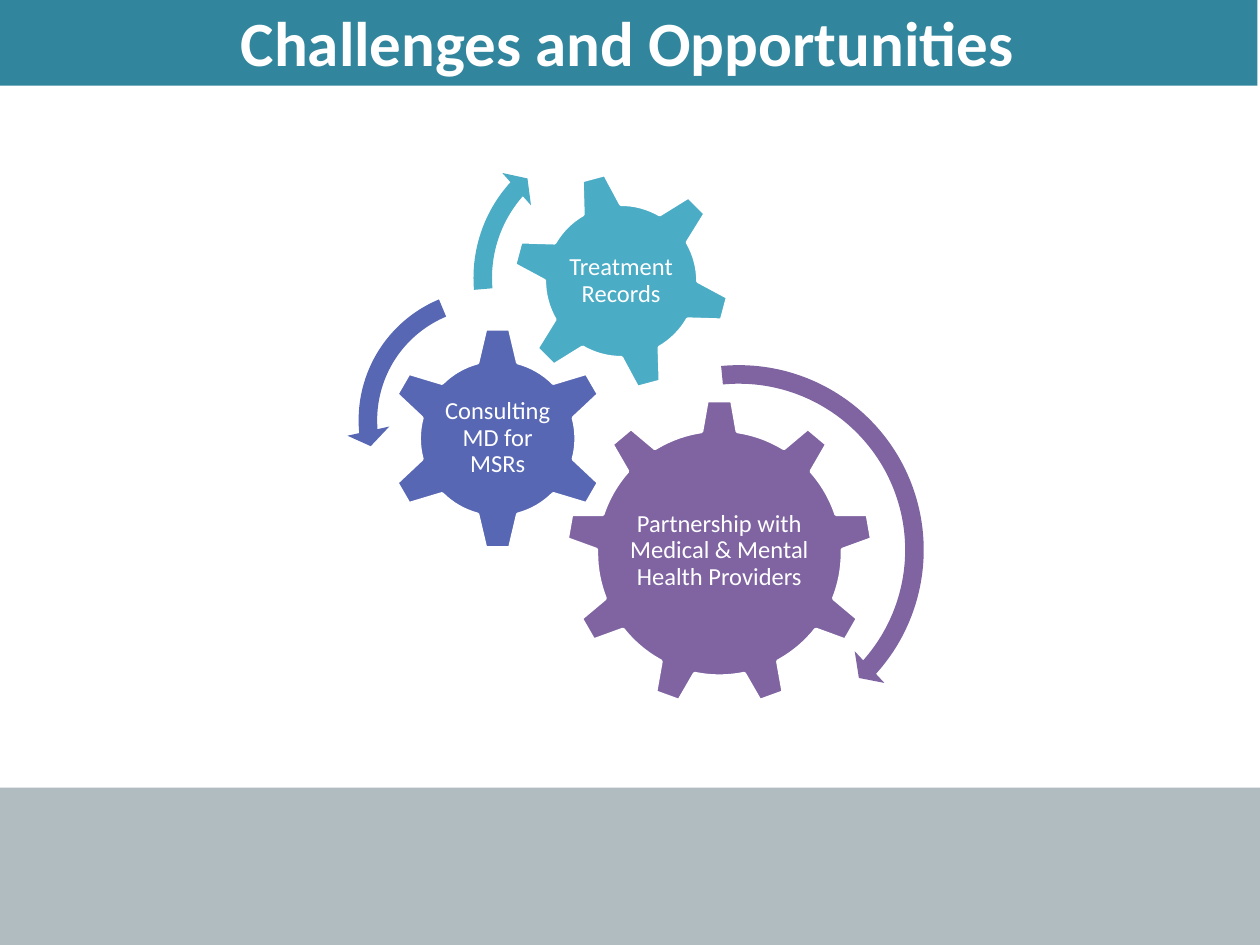
from dataclasses import dataclass

from pptx import Presentation
from pptx.dml.color import RGBColor
from pptx.enum.shapes import MSO_SHAPE
from pptx.enum.text import MSO_ANCHOR, MSO_AUTO_SIZE, PP_ALIGN
from pptx.util import Inches, Pt


@dataclass(frozen=True)
class Theme:
    font: str = "Calibri"
    title_size: int = 36
    label_size: int = 14
    outline: float = 2
    white: str = "FFFFFF"
    banner: str = "31859C"
    footer: str = "B0BCC0"
    purple: str = "8064A2"
    indigo: str = "5767B4"
    aqua: str = "4BACC6"


THEME = Theme()


def rgb(color):
    return RGBColor.from_string(color)


def add_filled(slide, preset, box, color):
    sp = slide.shapes.add_shape(preset, *map(Inches, box))
    sp.shadow.inherit = False
    sp.fill.solid()
    sp.fill.fore_color.rgb = rgb(color)
    sp.line.fill.background()
    return sp


def set_text(tf, text, size, bold=False):
    tf.word_wrap = True
    tf.text = text
    p = tf.paragraphs[0]
    p.alignment = PP_ALIGN.CENTER
    font = p.runs[0].font
    font.name = THEME.font
    font.size = Pt(size)
    font.bold = bold
    font.color.rgb = rgb(THEME.white)
    return p


def add_banner(slide, text):
    sp = add_filled(slide, MSO_SHAPE.RECTANGLE, (-0.02, -0.03, 10, 0.71), THEME.banner)
    set_text(sp.text_frame, text, THEME.title_size, bold=True)
    sp.text_frame.auto_size = MSO_AUTO_SIZE.SHAPE_TO_FIT_TEXT


def add_gear(slide, preset, left, top, size, color, rotation=0):
    sp = add_filled(slide, preset, (left, top, size, size), color)
    sp.line.color.rgb = rgb(THEME.white)
    sp.line.width = Pt(THEME.outline)
    sp.rotation = rotation


def add_label(slide, text, box):
    tf = slide.shapes.add_textbox(*map(Inches, box)).text_frame
    tf.margin_left = tf.margin_right = tf.margin_top = tf.margin_bottom = Inches(0.02)
    tf.vertical_anchor = MSO_ANCHOR.MIDDLE
    set_text(tf, text, THEME.label_size).line_spacing = 0.9


def add_turn_arrow(slide, preset, left, top, size, color, widths, angles):
    sp = add_filled(slide, preset, (left, top, size, size), color)
    band, head = (percent / 100 for percent in widths)
    turns = [degrees * 60000 / 100000 for degrees in angles]
    for i, value in enumerate([band, *turns, head]):
        sp.adjustments[i] = value


def main():
    prs = Presentation()
    prs.slide_width, prs.slide_height = Inches(10), Inches(7.5)
    slide = prs.slides.add_slide(prs.slide_layouts[6])

    add_filled(slide, MSO_SHAPE.RECTANGLE, (0, 6.25, 10, 1.25), THEME.footer)
    add_banner(slide, "Challenges and Opportunities")

    add_gear(slide, MSO_SHAPE.GEAR_9, 4.49, 3.17, 2.44, THEME.purple)
    add_label(slide, "Partnership with Medical & Mental Health Providers",
              (4.98, 3.74, 1.46, 1.26))
    add_gear(slide, MSO_SHAPE.GEAR_6, 3.06, 2.59, 1.78, THEME.indigo)
    add_label(slide, "Consulting MD for MSRs", (3.51, 3.04, 0.88, 0.88))
    add_gear(slide, MSO_SHAPE.GEAR_6, 4.06, 1.36, 1.74, THEME.aqua, rotation=345)
    add_label(slide, "Treatment Records", (4.44, 1.74, 0.98, 0.98))

    add_turn_arrow(slide, MSO_SHAPE.CIRCULAR_ARROW, 4.3, 2.8, 3.13, THEME.purple,
                   (4.7, 5.5), (4.98, 41.89, 264.47))
    add_turn_arrow(slide, MSO_SHAPE.LEFT_CIRCULAR_ARROW, 2.75, 2.2, 2.27, THEME.indigo,
                   (6.5, 7.5), (7.17, 174.82, 247.3))
    add_turn_arrow(slide, MSO_SHAPE.CIRCULAR_ARROW, 3.66, 0.98, 2.45, THEME.aqua,
                   (6, 7), (6.57, 221.9, 175.14))

    prs.save("out.pptx")


if __name__ == "__main__":
    main()
